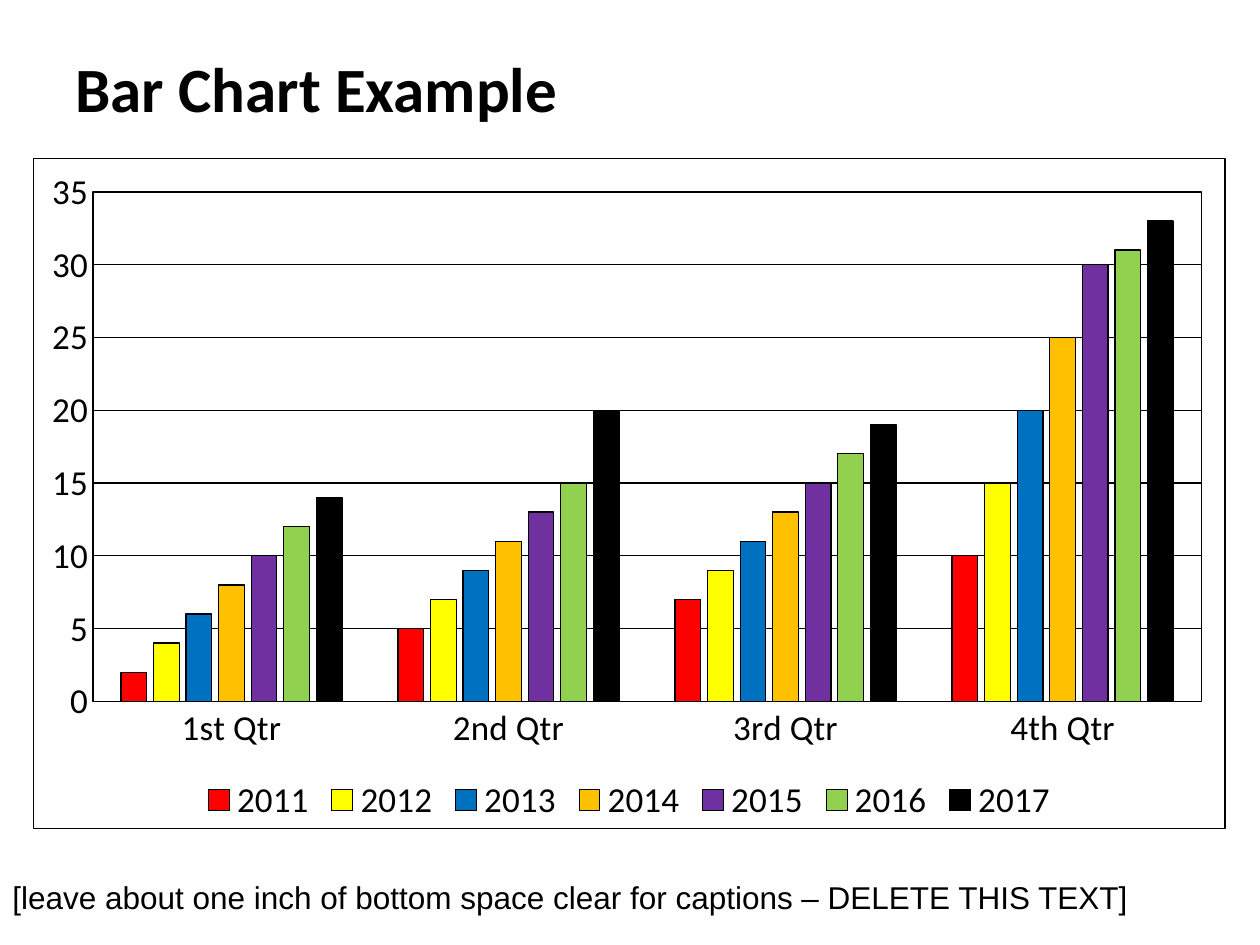
"""Build a slide with a clustered column chart of quarters by year."""
from dataclasses import dataclass

from lxml import etree
from pptx import Presentation
from pptx.chart.chart import Chart
from pptx.chart.data import CategoryChartData
from pptx.dml.color import RGBColor
from pptx.enum.chart import XL_CHART_TYPE, XL_LEGEND_POSITION, XL_TICK_MARK
from pptx.enum.shapes import MSO_SHAPE
from pptx.enum.text import MSO_ANCHOR, MSO_AUTO_SIZE, PP_ALIGN
from pptx.util import Cm, Pt

COLUMN = XL_CHART_TYPE.COLUMN_CLUSTERED
BOTTOM = XL_LEGEND_POSITION.BOTTOM
NO_TICK = XL_TICK_MARK.NONE
RECT = MSO_SHAPE.RECTANGLE
MIDDLE = MSO_ANCHOR.MIDDLE
GROW = MSO_AUTO_SIZE.SHAPE_TO_FIT_TEXT
LEFT = PP_ALIGN.LEFT

COLORS = {
    "black": "000000", "white": "FFFFFF", "red": "FF0000", "yellow": "FFFF00",
    "blue": "0070C0", "amber": "FFC000", "purple": "7030A0", "green": "92D050",
}
NS_C = "http://schemas.openxmlformats.org/drawingml/2006/chart"
NS_A = "http://schemas.openxmlformats.org/drawingml/2006/main"
NS = f'xmlns:c="{NS_C}" xmlns:a="{NS_A}"'
QUARTERS = ["1st Qtr", "2nd Qtr", "3rd Qtr", "4th Qtr"]


@dataclass
class Year:
    name: str
    color: str
    values: tuple[int, ...]


@dataclass
class Box:
    left: float
    top: float
    width: float
    height: float

    def place(self) -> tuple:
        return Cm(self.left), Cm(self.top), Cm(self.width), Cm(self.height)


YEARS = [
    Year("2011", "red", (2, 5, 7, 10)),
    Year("2012", "yellow", (4, 7, 9, 15)),
    Year("2013", "blue", (6, 9, 11, 20)),
    Year("2014", "amber", (8, 11, 13, 25)),
    Year("2015", "purple", (10, 13, 15, 30)),
    Year("2016", "green", (12, 15, 17, 31)),
    Year("2017", "black", (14, 20, 19, 33)),
]


def rgb(name: str) -> RGBColor:
    return RGBColor.from_string(COLORS[name])


def style(font, size: float, face: str, bold: bool = False) -> None:
    font.size, font.name, font.bold = Pt(size), face, bold
    font.color.rgb = rgb("black")


def outline(line) -> None:
    line.color.rgb = rgb("black")
    line.width = Pt(0.75)


def write(frame, text: str, size: float, face: str, bold: bool = False) -> None:
    para = frame.paragraphs[0]
    para.alignment = LEFT
    run = para.add_run()
    run.text = text
    style(run.font, size, face, bold)


def frame_xml(fill: str):
    return etree.fromstring(
        f'<c:spPr {NS}>{fill}<a:ln w="{Pt(0.75)}"><a:solidFill>'
        f'<a:srgbClr val="{COLORS["black"]}"/></a:solidFill></a:ln></c:spPr>')


def layout_xml(spots: dict[str, float]):
    modes = '<c:xMode val="edge"/><c:yMode val="edge"/>'
    parts = "".join(f'<c:{key} val="{val}"/>' for key, val in spots.items())
    return etree.fromstring(
        f'<c:layout {NS}><c:manualLayout><c:layoutTarget val="inner"/>'
        f'{modes}{parts}</c:manualLayout></c:layout>')


def finish(chart: Chart) -> None:
    """Frame the chart and its plot, and fix the place of the plot."""
    root = chart.element.find(f"{{{NS_C}}}chart")
    area = root.find(f"{{{NS_C}}}plotArea")
    for old in area.findall(f"{{{NS_C}}}layout"):
        area.remove(old)
    area.insert(0, layout_xml({"x": 0.05, "y": 0.05, "w": 0.93, "h": 0.76}))
    area.append(frame_xml("<a:noFill/>"))
    fill = (f'<a:solidFill><a:srgbClr val="{COLORS["white"]}">'
            '<a:alpha val="70000"/></a:srgbClr></a:solidFill>')
    root.addnext(frame_xml(fill))


def add_bars(slide, box: Box) -> None:
    data = CategoryChartData()
    data.categories = QUARTERS
    for year in YEARS:
        data.add_series(year.name, year.values)
    chart = slide.shapes.add_chart(COLUMN, *box.place(), data).chart
    style(chart.font, 10, "Calibri")
    chart.has_title = False
    chart.has_legend = True
    chart.legend.position = BOTTOM
    chart.legend.include_in_layout = False
    style(chart.legend.font, 20, "Calibri")

    plot = chart.plots[0]
    plot.gap_width, plot.overlap = 219, -27
    plot.vary_by_categories = False
    for series, year in zip(plot.series, YEARS):
        series.format.fill.solid()
        series.format.fill.fore_color.rgb = rgb(year.color)
        series.invert_if_negative = False
        outline(series.format.line)

    cats, vals = chart.category_axis, chart.value_axis
    for axis in (cats, vals):
        axis.major_tick_mark = axis.minor_tick_mark = NO_TICK
        style(axis.tick_labels.font, 20, "Calibri")
    outline(cats.format.line)
    vals.format.line.fill.background()
    vals.minimum_scale, vals.maximum_scale, vals.major_unit = 0, 35, 5
    vals.has_major_gridlines = True
    outline(vals.major_gridlines.format.line)
    finish(chart)


def add_title(slide, box: Box, text: str) -> None:
    title = slide.shapes.title
    title.left, title.top, title.width, title.height = box.place()
    frame = title.text_frame
    frame.vertical_anchor = MIDDLE
    write(frame, text, 36, "Calibri", True)
    frame.paragraphs[0].line_spacing = 0.9


def add_note(slide, box: Box, text: str) -> None:
    note = slide.shapes.add_shape(RECT, *box.place())
    note.shadow.inherit = False
    note.fill.solid()
    note.fill.fore_color.rgb = rgb("white")
    note.line.fill.background()
    frame = note.text_frame
    frame.word_wrap = True
    frame.auto_size = GROW
    write(frame, text, 18, "Arial")


def main() -> None:
    deck = Presentation()
    deck.slide_width, deck.slide_height = Cm(25.4), Cm(19.05)
    slide = deck.slides.add_slide(deck.slide_layouts[5])
    add_title(slide, Box(1.27, 0.97, 22.86, 1.78), "Bar Chart Example")
    add_bars(slide, Box(0.66, 3.18, 24.05, 13.54))
    add_note(slide, Box(0, 17.58, 25.4, 1.02),
             "[leave about one inch of bottom space clear for captions"
             " – DELETE THIS TEXT]")
    deck.save("out.pptx")


if __name__ == "__main__":
    main()
